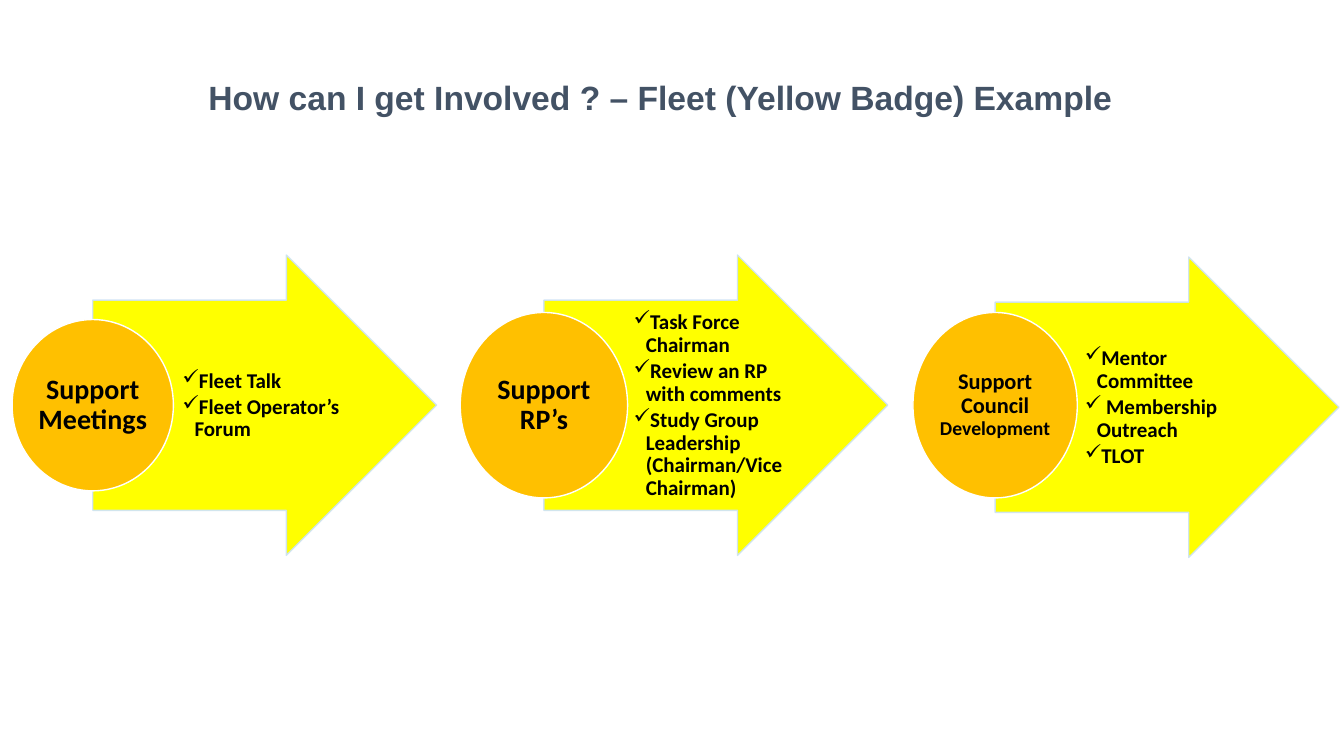
from lxml import etree
from pptx import Presentation
from pptx.dml.color import RGBColor
from pptx.enum.shapes import MSO_SHAPE
from pptx.enum.text import MSO_ANCHOR, PP_ALIGN
from pptx.oxml.ns import qn
from pptx.util import Inches, Pt

ARROW, OVAL = MSO_SHAPE.RIGHT_ARROW, MSO_SHAPE.OVAL
MIDDLE = MSO_ANCHOR.MIDDLE
CENTER, LEFT = PP_ALIGN.CENTER, PP_ALIGN.LEFT

# Content
TITLE = "How can I get Involved ? – Fleet (Yellow Badge) Example"
STEPS = [
    {"heading": [("Support Meetings", 20)],
     "items": ["Fleet Talk", "Fleet Operator’s Forum"],
     "circle": (1.6, 1.7), "arrow_top": 2.53},
    {"heading": [("Support RP’s", 20)],
     "items": ["Task Force Chairman", "Review an RP with comments",
               "Study Group Leadership (Chairman/Vice Chairman)"],
     "circle": (1.66, 1.84), "arrow_top": 2.53},
    {"heading": [("Support Council ", 16), ("Development", 14)],
     "items": ["Mentor Committee", " Membership Outreach", "TLOT"],
     "circle": (1.63, 1.84), "arrow_top": 2.55},
]
COLORS = {"title": "435265", "arrow": "FFFF00", "arrow_line": "CDE3F5",
          "circle": "FFC000", "circle_line": "FFFFFF", "text": "000000"}

# Layout in inches
FIRST_ARROW, ARROW_PITCH = 0.92, 4.475
ARROW_WIDTH, ARROW_HEIGHT = 3.41, 2.98
CIRCLE_MIDDLE = 4.02
LIST_OFFSET = (0.85, 0.45)
LIST_SIZE = (1.66, 2.09)
HANGING = 0.12


def add_preset(slide, kind, box, fill, line):
    shape = slide.shapes.add_shape(kind, *map(Inches, box))
    shape.shadow.inherit = False
    shape.fill.solid()
    shape.fill.fore_color.rgb = RGBColor.from_string(COLORS[fill])
    shape.line.color.rgb = RGBColor.from_string(COLORS[line])
    shape.line.width = Pt(1)
    return shape


def set_frame(shape, margins):
    frame = shape.text_frame
    frame.word_wrap = True
    frame.vertical_anchor = MIDDLE
    (frame.margin_left, frame.margin_top,
     frame.margin_right, frame.margin_bottom) = map(Inches, margins)
    return frame


def fill_paragraph(paragraph, runs, alignment, font, color):
    paragraph.alignment = alignment
    paragraph.line_spacing = 0.9
    for text, size in runs:
        run = paragraph.add_run()
        run.text = text
        run.font.name = font
        run.font.size = Pt(size)
        run.font.bold = True
        run.font.color.rgb = RGBColor.from_string(COLORS[color])


def add_check_bullet(paragraph):
    properties = paragraph._p.get_or_add_pPr()
    properties.set("marL", str(Inches(HANGING)))
    properties.set("indent", str(-Inches(HANGING)))
    etree.SubElement(properties, qn("a:buChar")).set("char", "✓")


def add_step(slide, index, step):
    arrow_left, arrow_top = FIRST_ARROW + index * ARROW_PITCH, step["arrow_top"]

    # Arrow
    arrow = add_preset(slide, ARROW, (arrow_left, arrow_top, ARROW_WIDTH, ARROW_HEIGHT),
                       "arrow", "arrow_line")
    arrow.adjustments[0] = 0.7
    arrow.adjustments[1] = 0.5
    line_color = arrow.line.fill._xPr.find(".//" + qn("a:srgbClr"))
    etree.SubElement(line_color, qn("a:alpha")).set("val", "90000")

    # Checklist on the arrow
    list_box = slide.shapes.add_textbox(
        Inches(arrow_left + LIST_OFFSET[0]), Inches(arrow_top + LIST_OFFSET[1]),
        *map(Inches, LIST_SIZE))
    frame = set_frame(list_box, (0.04, 0.01, 0.02, 0.01))
    for number, item in enumerate(step["items"]):
        paragraph = frame.add_paragraph() if number else frame.paragraphs[0]
        add_check_bullet(paragraph)
        fill_paragraph(paragraph, [(item, 15)], LEFT, "Calibri", "text")
        paragraph.space_after = Pt(2.5)

    # Circle centred on the arrow's tail
    width, height = step["circle"]
    circle = add_preset(slide, OVAL, (arrow_left - width / 2, CIRCLE_MIDDLE - height / 2,
                                      width, height), "circle", "circle_line")
    heading = set_frame(circle, (0.01, 0.01, 0.01, 0.01)).paragraphs[0]
    fill_paragraph(heading, step["heading"], CENTER, "Calibri", "text")


def main():
    presentation = Presentation()
    presentation.slide_width, presentation.slide_height = Inches(13.33), Inches(7.5)
    slide = presentation.slides.add_slide(presentation.slide_layouts[6])

    # Title
    title = slide.shapes.add_textbox(Inches(0.55), Inches(0.46), Inches(12), Inches(1.05))
    frame = set_frame(title, (0.1, 0.05, 0.1, 0.05))
    fill_paragraph(frame.paragraphs[0], [(TITLE, 24)], CENTER, "Arial", "title")

    # Three steps
    for index, step in enumerate(STEPS):
        add_step(slide, index, step)

    presentation.save("out.pptx")


if __name__ == "__main__":
    main()
